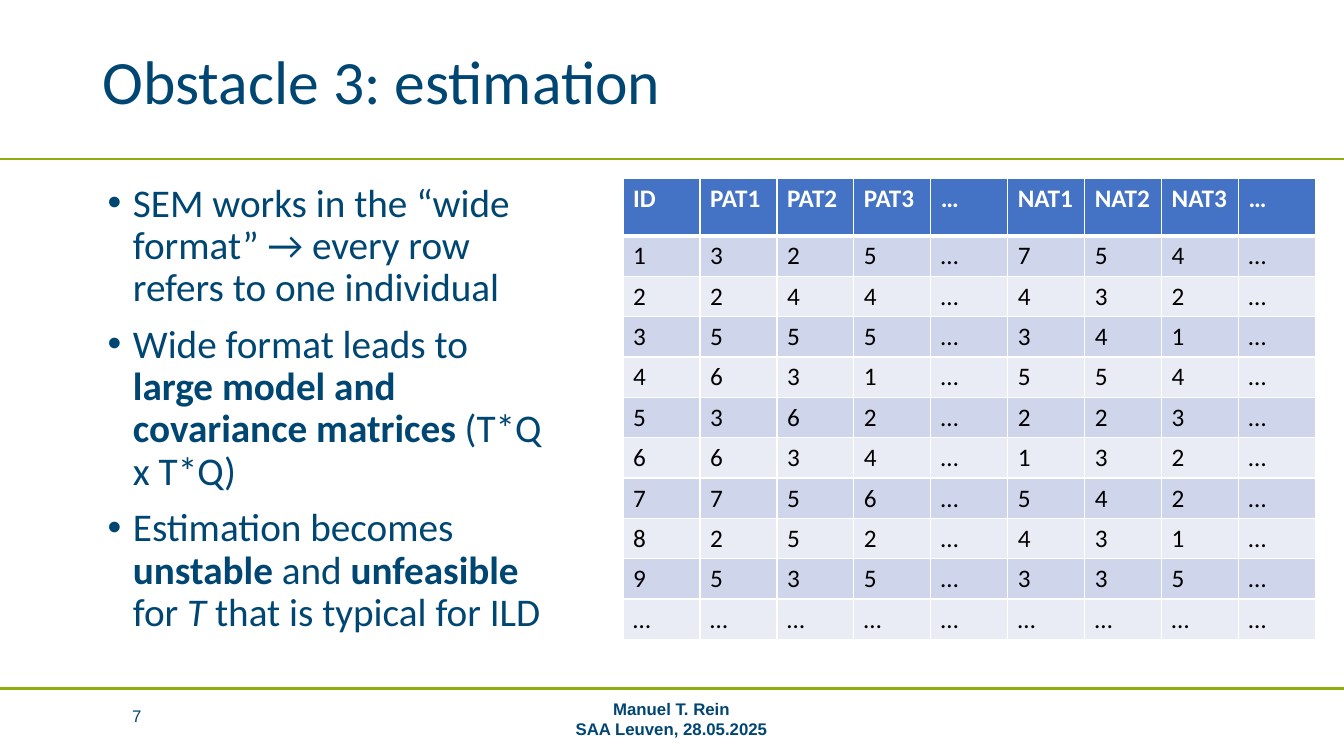
from dataclasses import dataclass

from lxml.etree import SubElement
from pptx import Presentation
from pptx.dml.color import RGBColor
from pptx.enum.shapes import MSO_CONNECTOR
from pptx.enum.text import MSO_ANCHOR, PP_ALIGN
from pptx.oxml.ns import qn
from pptx.slide import Slide
from pptx.table import _Cell
from pptx.text.text import _Paragraph
from pptx.util import Inches, Pt

HUES = {
    "navy": "004673",
    "green": "8DAE10",
    "head": "4472C4",
    "dark": "CFD5EA",
    "light": "E9EBF5",
    "white": "FFFFFF",
    "black": "000000",
}


@dataclass(frozen=True)
class Run:
    text: str
    bold: bool = False
    slant: bool = False


@dataclass(frozen=True)
class Box:
    left: float
    top: float
    width: float
    height: float
    lines: tuple[tuple[Run, ...], ...]
    size: float
    font: str = "Calibri"
    align: PP_ALIGN = PP_ALIGN.LEFT
    anchor: MSO_ANCHOR = MSO_ANCHOR.MIDDLE
    inset: bool = True
    space: float = 1.0
    list: bool = False


BOXES = (
    Box(3.8, 6.93, 5.72, 0.4,
        ((Run("Manuel T. Rein", bold=True),),
         (Run("SAA Leuven, 28.05.2025", bold=True),)),
        12, "Arial", PP_ALIGN.CENTER, inset=False),
    Box(0.92, 6.9, 0.92, 0.4, ((Run("7 "),),),
        12, "Arial", PP_ALIGN.CENTER, inset=False),
    Box(0.92, 0.26, 11.5, 1.16, ((Run("Obstacle 3: estimation"),),),
        44, space=0.9),
    Box(0.97, 1.77, 4.51, 4.76,
        ((Run("SEM works in the “wide format” → every row refers to one individual"),),
         (Run("Wide format leads to "),
          Run("large model and covariance matrices ", bold=True),
          Run("(T*Q x T*Q)")),
         (Run("Estimation becomes "), Run("unstable", bold=True), Run(" and "),
          Run("unfeasible", bold=True), Run(" for "), Run("T", slant=True),
          Run(" that is typical for ILD"))),
        28, anchor=MSO_ANCHOR.TOP, space=0.9, list=True),
)

RULES = (6.83, 1.58)

ROWS = (
    "ID PAT1 PAT2 PAT3 … NAT1 NAT2 NAT3 …",
    "1 3 2 5 … 7 5 4 …",
    "2 2 4 4 … 4 3 2 …",
    "3 5 5 5 … 3 4 1 …",
    "4 6 3 1 … 5 5 4 …",
    "5 3 6 2 … 2 2 3 …",
    "6 6 3 4 … 1 3 2 …",
    "7 7 5 6 … 5 4 2 …",
    "8 2 5 2 … 4 3 1 …",
    "9 5 3 5 … 3 3 5 …",
    "… … … … … … … … …",
)


def paint(name: str) -> RGBColor:
    return RGBColor.from_string(HUES[name])


def write(para: _Paragraph, run: Run, size: float, font: str, hue: str) -> None:
    part = para.add_run()
    part.text = run.text
    part.font.size = Pt(size)
    part.font.name = font
    part.font.bold = run.bold
    part.font.italic = run.slant
    part.font.color.rgb = paint(hue)


def bullet(para: _Paragraph) -> None:
    para.space_before = Pt(10)
    props = para._p.get_or_add_pPr()
    props.set("marL", str(Inches(0.25)))
    props.set("indent", str(Inches(-0.25)))
    SubElement(props, qn("a:buFont")).set("typeface", "Arial")
    SubElement(props, qn("a:buChar")).set("char", "•")


def add_box(slide: Slide, box: Box) -> None:
    frame = slide.shapes.add_textbox(
        Inches(box.left), Inches(box.top), Inches(box.width), Inches(box.height)
    ).text_frame
    frame.word_wrap = True
    frame.vertical_anchor = box.anchor
    if not box.inset:
        frame.margin_left = frame.margin_right = Inches(0)
        frame.margin_top = frame.margin_bottom = Inches(0)
    for i, line in enumerate(box.lines):
        para = frame.add_paragraph() if i else frame.paragraphs[0]
        para.alignment = box.align
        para.line_spacing = box.space
        if box.list:
            bullet(para)
        for run in line:
            write(para, run, box.size, box.font, "navy")


def add_rule(slide: Slide, top: float) -> None:
    rule = slide.shapes.add_connector(
        MSO_CONNECTOR.STRAIGHT, Inches(0), Inches(top), Inches(13.33), Inches(top)
    )
    rule.line.color.rgb = paint("green")
    rule.line.width = Pt(1.5)
    SubElement(rule._element.spPr, qn("a:effectLst"))


def edge(cell: _Cell, base: float, top: float) -> None:
    props = cell._tc.get_or_add_tcPr()
    widths = {"a:lnL": 1, "a:lnR": 1, "a:lnT": top, "a:lnB": base}
    for tag, width in widths.items():
        line = SubElement(props, qn(tag))
        line.set("w", str(Pt(width)))
        fill = SubElement(line, qn("a:solidFill"))
        SubElement(fill, qn("a:srgbClr")).set("val", HUES["white"])


def add_grid(slide: Slide) -> None:
    cells = [row.split() for row in ROWS]
    wide = len(cells[0])
    table = slide.shapes.add_table(
        len(cells), wide, Inches(6.18), Inches(1.77), Inches(6.87), Inches(4.59)
    ).table
    table.horz_banding = False
    for col in table.columns:
        col.width = Inches(6.87 / wide)
    for i, row in enumerate(cells):
        head = i == 0
        table.rows[i].height = Inches(0.57 if head else 0.4)
        for j, text in enumerate(row):
            cell = table.cell(i, j)
            edge(cell, 3 if head else 1, 3 if i == 1 else 1)
            cell.fill.solid()
            cell.fill.fore_color.rgb = paint(
                "head" if head else "dark" if i % 2 else "light"
            )
            write(cell.text_frame.paragraphs[0], Run(text, bold=head),
                  18, "Calibri", "white" if head else "black")


def main() -> None:
    deck = Presentation()
    deck.slide_width = Inches(13.33)
    deck.slide_height = Inches(7.5)
    slide = deck.slides.add_slide(deck.slide_layouts[6])
    for top in RULES:
        add_rule(slide, top)
    for box in BOXES:
        add_box(slide, box)
    add_grid(slide)
    deck.save("out.pptx")


if __name__ == "__main__":
    main()
